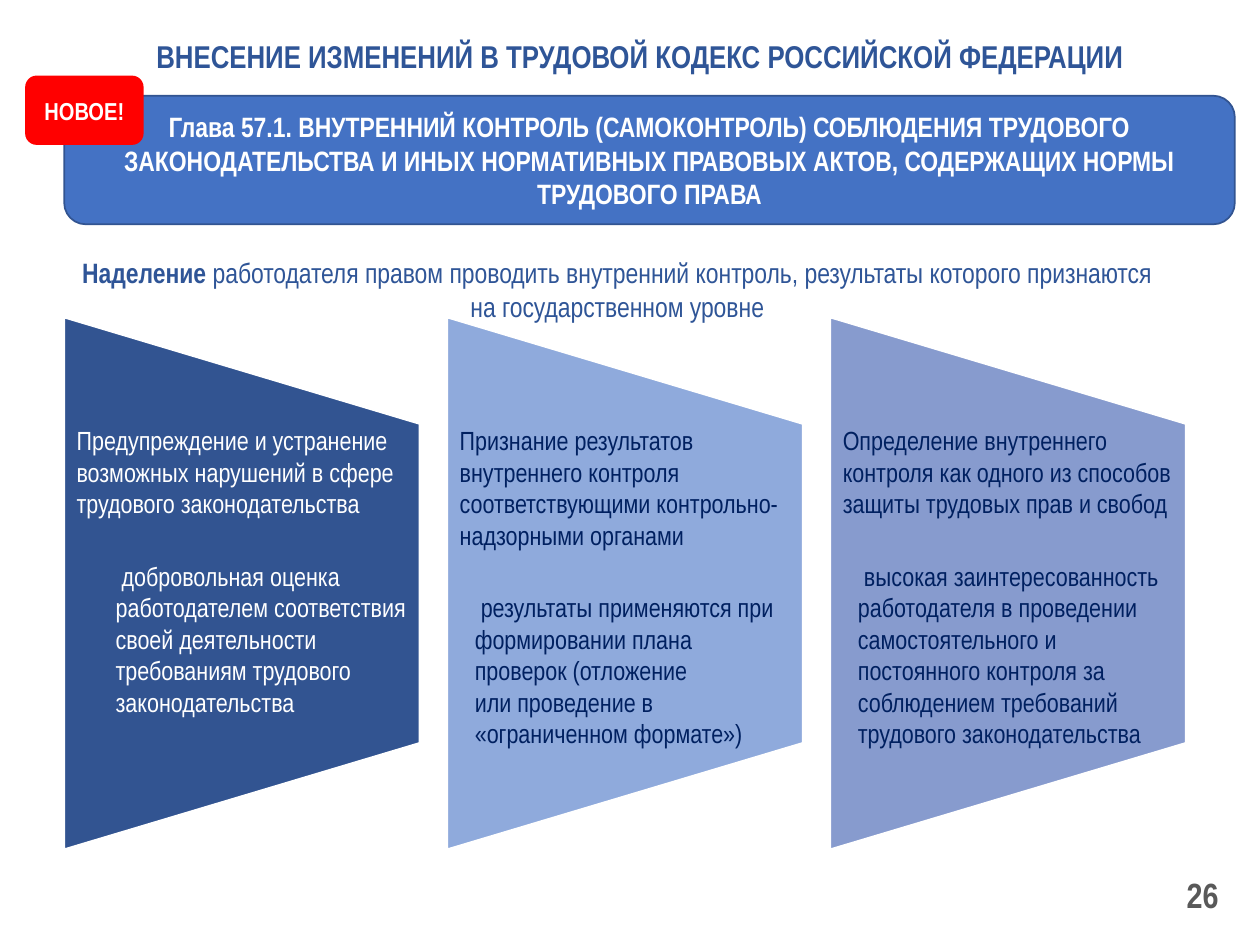
"""Build the slide on internal control in the Labour Code."""
from pptx import Presentation
from pptx.dml.color import RGBColor
from pptx.enum import shapes, text
from pptx.util import Inches, Pt

FONT = "Arial Narrow"
WHITE = RGBColor(0xFF, 0xFF, 0xFF)
NAVY = RGBColor(0x00, 0x20, 0x60)
HEADING_BLUE = RGBColor(0x2F, 0x55, 0x97)
DARK_BLUE = RGBColor(0x32, 0x54, 0x91)
BLUE = RGBColor(0x44, 0x72, 0xC4)
LIGHT_BLUE = RGBColor(0x8F, 0xAA, 0xDC)
LAVENDER = RGBColor(0x87, 0x9B, 0xCE)
RED = RGBColor(0xFF, 0x00, 0x00)
GRAY = RGBColor(0x59, 0x59, 0x59)

prs = Presentation()
prs.slide_width, prs.slide_height = Inches(10), Inches(7.5)
slide = prs.slides.add_slide(prs.slide_layouts[5])


def add_block(kind, box, fill, outline=None):
    block = slide.shapes.add_shape(kind, *[Inches(length) for length in box])
    block.shadow.inherit = False
    block.fill.solid()
    block.fill.fore_color.rgb = fill
    if outline is None:
        block.line.fill.background()
    else:
        block.line.color.rgb = outline
        block.line.width = Pt(1)
    return block


def write(holder, wording, size, color, bold=True, align=text.PP_ALIGN.CENTER):
    frame = holder.text_frame
    frame.word_wrap = True
    frame.auto_size = text.MSO_AUTO_SIZE.NONE
    frame.vertical_anchor = text.MSO_ANCHOR.MIDDLE
    frame.text = wording
    for paragraph in frame.paragraphs:
        paragraph.alignment = align
        paragraph.font.name = FONT
        paragraph.font.size = Pt(size)
        paragraph.font.bold = bold
        paragraph.font.color.rgb = color
    return frame


title = slide.shapes.title
title.left, title.top = Inches(0.83), Inches(0.13)
title.width, title.height = Inches(8.5), Inches(0.63)
write(title, "ВНЕСЕНИЕ ИЗМЕНЕНИЙ В ТРУДОВОЙ КОДЕКС РОССИЙСКОЙ ФЕДЕРАЦИИ", 18, HEADING_BLUE)

summary = add_block(shapes.MSO_SHAPE.RECTANGLE, (0.43, 1.94, 8.94, 0.71), WHITE)
summary_line = write(summary, "Наделение ", 16, HEADING_BLUE, bold=False).paragraphs[0]
summary_line.runs[0].font.bold = True
summary_line.add_run().text = (
    "работодателя правом проводить внутренний контроль, "
    "результаты которого признаются на государственном уровне"
)

measures = [
    (DARK_BLUE, WHITE, 0.31,
     "Предупреждение и устранение возможных нарушений в сфере трудового законодательства",
     " добровольная оценка работодателем соответствия своей деятельности требованиям "
     "трудового законодательства"),
    (LIGHT_BLUE, NAVY, 0.12,
     "Признание результатов внутреннего контроля соответствующими контрольно-надзорными органами",
     " результаты применяются при формировании плана проверок (отложение\v"
     "или проведение в «ограниченном формате»)"),
    (LAVENDER, NAVY, 0.12,
     "Определение внутреннего контроля как одного из способов защиты трудовых прав и свобод",
     " высокая заинтересованность работодателя в проведении самостоятельного и постоянного "
     "контроля за соблюдением требований трудового законодательства"),
]
for column, (fill, color, indent, measure, outcome) in enumerate(measures):
    left = 0.51 + 3.04 * column
    panel = add_block(shapes.MSO_SHAPE.FLOWCHART_MANUAL_OPERATION,
                      (left - 0.7, 3.22, 4.22, 2.82), fill, WHITE)
    panel.rotation = 270
    caption = slide.shapes.add_textbox(Inches(left), Inches(3.37), Inches(2.82), Inches(2.53))
    frame = write(caption, f"{measure}\n{outcome}", 15, color, bold=False,
                  align=text.PP_ALIGN.LEFT)
    frame.vertical_anchor = text.MSO_ANCHOR.TOP
    frame.margin_top = frame.margin_bottom = 0
    measure_line, outcome_line = frame.paragraphs
    measure_line.space_after = Pt(23.5)
    outcome_line.level = 1
    properties = outcome_line._p.get_or_add_pPr()
    properties.set("marL", str(Inches(indent)))
    properties.set("indent", "0")

page_number = slide.shapes.add_textbox(Inches(7.44), Inches(6.9), Inches(2.33), Inches(0.4))
write(page_number, "26", 20, GRAY, align=text.PP_ALIGN.RIGHT)

chapter = add_block(shapes.MSO_SHAPE.ROUNDED_RECTANGLE, (0.51, 0.76, 9.29, 1.02), BLUE, DARK_BLUE)
write(chapter, "Глава 57.1. ВНУТРЕННИЙ КОНТРОЛЬ (САМОКОНТРОЛЬ) СОБЛЮДЕНИЯ ТРУДОВОГО "
      "ЗАКОНОДАТЕЛЬСТВА И ИНЫХ НОРМАТИВНЫХ ПРАВОВЫХ АКТОВ, СОДЕРЖАЩИХ НОРМЫ "
      "ТРУДОВОГО ПРАВА", 16, WHITE)

badge = add_block(shapes.MSO_SHAPE.ROUNDED_RECTANGLE, (0.2, 0.6, 0.94, 0.55), RED)
write(badge, "НОВОЕ!", 14, WHITE)

prs.save("out.pptx")
